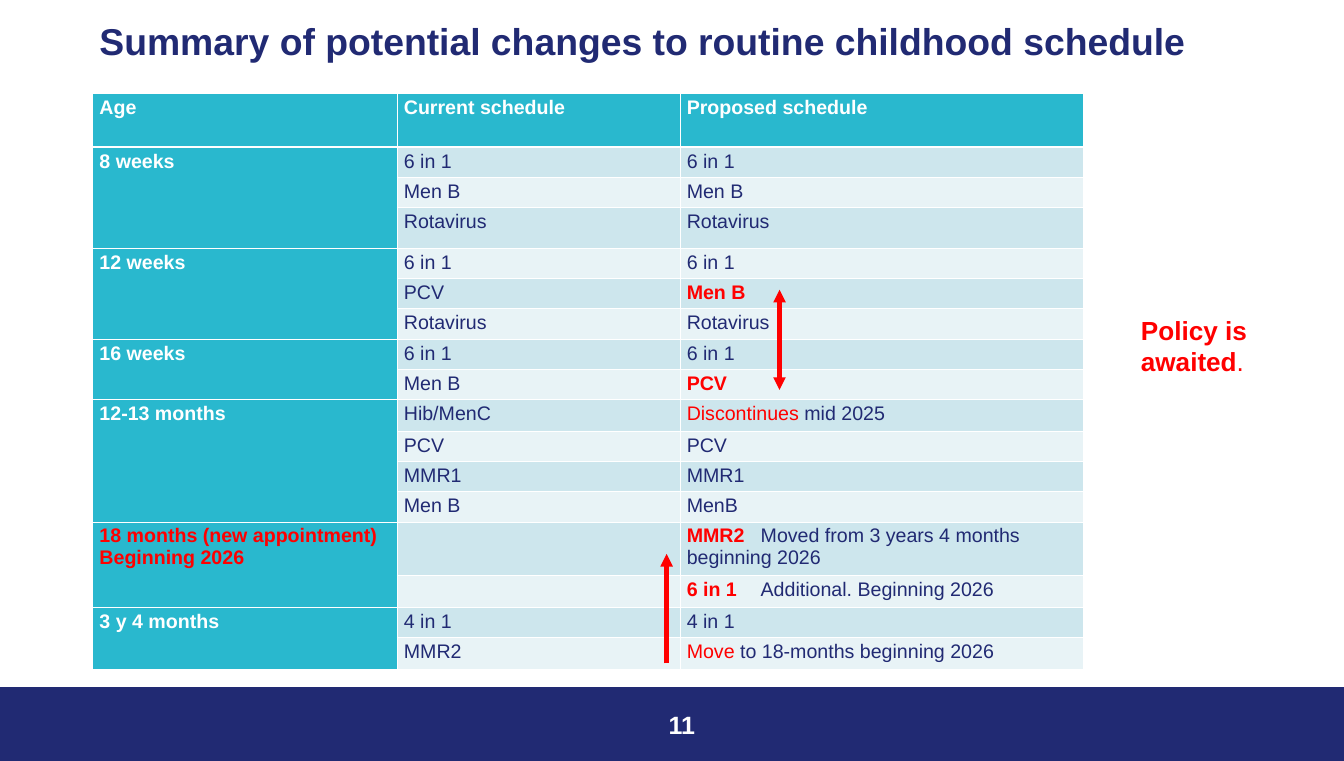
from lxml.etree import SubElement
from pptx import Presentation
from pptx.dml.color import RGBColor
from pptx.enum.shapes import MSO_CONNECTOR, MSO_SHAPE
from pptx.enum.text import MSO_ANCHOR, PP_ALIGN
from pptx.oxml.ns import qn
from pptx.util import Inches, Pt

HUES = {"navy": "212A73", "teal": "29B8CE", "dark": "CDE6ED",
        "pale": "E8F3F6", "red": "FF0000", "white": "FFFFFF"}
HEAD = ["Age", "Current schedule", "Proposed schedule"]
COLS = [4.53, 4.21, 6]
TALL = {0: 0.8, 3: 0.6, 9: 0.47, 13: 0.8, 14: 0.47, 16: 0.47}
TAB = 1.1

PLAIN = ("navy", False)
RED = ("red", False)
BOLD = ("red", True)
WHITE = ("white", True)

AGES = [
    ("8 weeks", WHITE, [
        ("6 in 1", [("6 in 1", PLAIN)]),
        ("Men B", [("Men B", PLAIN)]),
        ("Rotavirus", [("Rotavirus", PLAIN)])]),
    ("12 weeks", WHITE, [
        ("6 in 1", [("6 in 1", PLAIN)]),
        ("PCV", [("Men B", BOLD)]),
        ("Rotavirus", [("Rotavirus", PLAIN)])]),
    ("16 weeks", WHITE, [
        ("6 in 1", [("6 in 1", PLAIN)]),
        ("Men B", [("PCV", BOLD)])]),
    ("12-13 months", WHITE, [
        ("Hib/MenC", [("Discontinues", RED), (" mid 2025", PLAIN)]),
        ("PCV", [("PCV", PLAIN)]),
        ("MMR1", [("MMR1", PLAIN)]),
        ("Men B", [("MenB", PLAIN)])]),
    ("18 months (new appointment)\nBeginning 2026", BOLD, [
        ("", [("MMR2\t", BOLD),
              ("Moved from 3 years 4 months beginning 2026", PLAIN)]),
        ("", [("6 in 1\t", BOLD), ("Additional. Beginning 2026", PLAIN)])]),
    ("3 y 4 months", WHITE, [
        ("4 in 1", [("4 in 1", PLAIN)]),
        ("MMR2", [("Move", RED), (" to 18-months beginning 2026", PLAIN)])]),
]


def hue(name):
    return RGBColor.from_string(HUES[name])


def style(font, size, look):
    font.name = "Arial"
    font.size = Pt(size)
    font.color.rgb = hue(look[0])
    font.bold = look[1]


def add_runs(para, parts, size):
    for text, look in parts:
        run = para.add_run()
        run.text = text
        style(run.font, size, look)


def add_title(slide, text):
    title = slide.shapes.title
    title.left, title.top = Inches(1.38), Inches(0.29)
    title.width, title.height = Inches(17.25), Inches(2.19)
    frame = title.text_frame
    frame.text = text
    frame.vertical_anchor = MSO_ANCHOR.TOP
    para = frame.paragraphs[0]
    para.alignment = PP_ALIGN.LEFT
    para.line_spacing = 0.9
    style(para.runs[0].font, 40, ("navy", True))


def add_band(slide):
    band = slide.shapes.add_shape(MSO_SHAPE.RECTANGLE, Inches(0), Inches(10.22),
                                  Inches(20), Inches(1.1))
    band.shadow.inherit = False
    band.fill.solid()
    band.fill.fore_color.rgb = hue("navy")
    band.line.color.rgb = hue("navy")
    band.line.width = Pt(1)


def add_label(slide, left, top, width, height, parts, size, align):
    box = slide.shapes.add_textbox(Inches(left), Inches(top),
                                   Inches(width), Inches(height))
    frame = box.text_frame
    frame.word_wrap = True
    para = frame.paragraphs[0]
    para.alignment = align
    add_runs(para, parts, size)
    return frame


def add_arrow(slide, left, start, end, ends):
    line = slide.shapes.add_connector(MSO_CONNECTOR.STRAIGHT, Inches(left),
                                      Inches(start), Inches(left), Inches(end))
    line.line.color.rgb = hue("red")
    line.line.width = Pt(4.5)
    stroke = line.line._get_or_add_ln()
    for end in ends:
        SubElement(stroke, qn("a:" + end), type="triangle")
    SubElement(line._element.spPr, qn("a:effectLst"))


def paint(cell, fill, thick=None):
    props = cell._tc.get_or_add_tcPr()
    for side in ("lnL", "lnR", "lnT", "lnB"):
        width = Pt(2.19 if side == thick else 0.73)
        edge = SubElement(props, qn("a:" + side), w=str(width))
        solid = SubElement(edge, qn("a:solidFill"))
        SubElement(solid, qn("a:srgbClr"), val=HUES["white"])
    cell.fill.solid()
    cell.fill.fore_color.rgb = hue(fill)


def write(cell, text, look):
    cell.text_frame.text = text
    for para in cell.text_frame.paragraphs:
        for run in para.runs:
            style(run.font, 21, look)


def write_parts(cell, parts):
    para = cell.text_frame.paragraphs[0]
    if "\t" in parts[0][0]:
        stops = SubElement(para._p.get_or_add_pPr(), qn("a:tabLst"))
        SubElement(stops, qn("a:tab"), pos=str(Inches(TAB)), algn="l")
    add_runs(para, parts, 21)


def add_grid(slide):
    count = 1 + sum(len(doses) for _, _, doses in AGES)
    highs = [TALL.get(row, 0.45) for row in range(count)]
    grid = slide.shapes.add_table(count, len(COLS), Inches(1.38), Inches(1.39),
                                  Inches(sum(COLS)), Inches(sum(highs))).table
    for col, width in zip(grid.columns, COLS):
        col.width = Inches(width)
    for row, high in zip(grid.rows, highs):
        row.height = Inches(high)
    for row in range(count):
        thick = {0: "lnB", 1: "lnT"}.get(row)
        for col in range(len(COLS)):
            band = "dark" if row % 2 else "pale"
            fill = "teal" if row == 0 or col == 0 else band
            paint(grid.cell(row, col), fill, thick)
    for col, text in enumerate(HEAD):
        write(grid.cell(0, col), text, WHITE)
    row = 1
    for age, look, doses in AGES:
        last = row + len(doses) - 1
        grid.cell(row, 0).merge(grid.cell(last, 0))
        write(grid.cell(row, 0), age, look)
        for now, plan in doses:
            write(grid.cell(row, 1), now, PLAIN)
            write_parts(grid.cell(row, 2), plan)
            row += 1


def main():
    deck = Presentation()
    deck.slide_width, deck.slide_height = Inches(20), Inches(11.32)
    slide = deck.slides.add_slide(deck.slide_layouts[5])
    add_band(slide)
    add_title(slide, "Summary of potential changes to routine childhood schedule")
    page = add_label(slide, 9.59, 10.48, 0.85, 0.6, [("11", WHITE)], 26.8,
                     PP_ALIGN.RIGHT)
    page.vertical_anchor = MSO_ANCHOR.MIDDLE
    add_grid(slide)
    add_arrow(slide, 11.6, 4.31, 5.8, ["headEnd", "tailEnd"])
    add_label(slide, 16.88, 4.62, 2.32, 1.04,
              [("Policy is awaited", BOLD), (".", RED)], 28, PP_ALIGN.LEFT)
    add_arrow(slide, 9.92, 9.87, 8.24, ["tailEnd"])
    deck.save("out.pptx")


if __name__ == "__main__":
    main()
